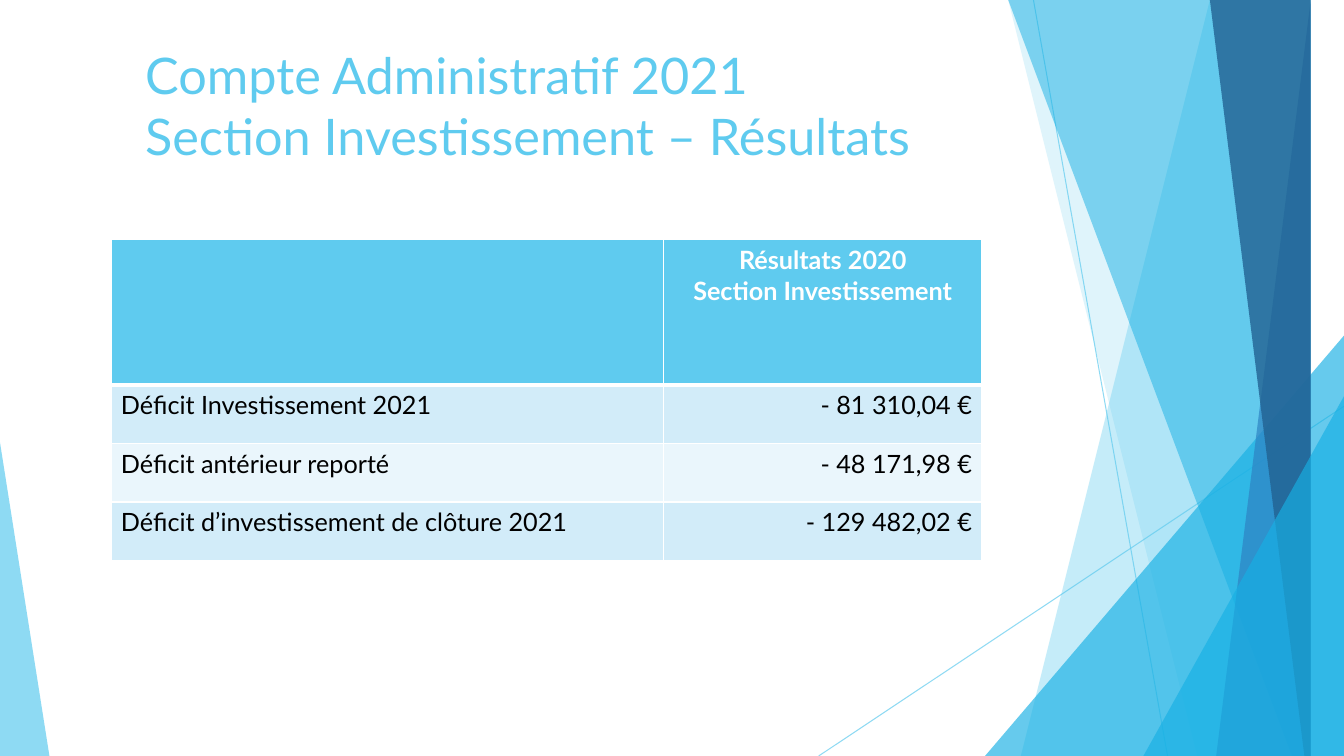
from dataclasses import dataclass

from lxml.etree import SubElement
from pptx import Presentation
from pptx.dml.color import RGBColor
from pptx.enum.shapes import MSO_CONNECTOR, MSO_SHAPE
from pptx.enum.text import MSO_ANCHOR, PP_ALIGN
from pptx.oxml.ns import qn
from pptx.util import Inches, Pt

# Content
TITLE = ("Compte Administratif 2021", "Section Investissement – Résultats")
ROWS = [
    ("", "Résultats 2020\nSection Investissement"),
    ("Déficit Investissement 2021", "- 81 310,04 €"),
    ("Déficit antérieur reporté", "- 48 171,98 €"),
    ("Déficit d’investissement de clôture 2021", "- 129 482,02 €"),
]


@dataclass(frozen=True)
class Theme:
    font: str = "Lato"
    title_size: int = 36
    table_size: int = 18
    sky: str = "5FCBEF"
    cyan: str = "17B0E4"
    blue: str = "2E83C3"
    navy: str = "226292"
    white: str = "FFFFFF"
    black: str = "000000"
    bands: tuple = ("EAF6FC", "D2ECF9")


THEME = Theme()

# Layout, in inches
WIDTH, HEIGHT = 13.33, 7.5
TITLE_BOX = (1.34, 0.39, 10.83, 1.44)
TABLE_LEFT, TABLE_TOP = 1.1, 2.38
COLUMNS = (5.48, 3.16)
HEADER_HEIGHT, ROW_HEIGHT = 1.44, 0.58

# Decoration: rays run from point to point
RAYS = [((10.25, 0), (11.58, HEIGHT)), ((WIDTH, 4.03), (8.12, HEIGHT))]
# Facets reach the right edge: (left at top, left at bottom, colour, opacity)
# Triangles stand on the bottom edge: (left, width, height, apex, colour, opacity)
DECORATION = [
    (12.28, 10.04, THEME.sky, 36),
    (10.5, 11.83, THEME.sky, 20),
    (9.77, 3.56, 4.17, 1, THEME.cyan, 66),
    (10.21, 12.91, THEME.cyan, 50),
    (13.03, 11.92, THEME.blue, 70),
    (11.96, 13.18, THEME.navy, 80),
    (11.34, 1.99, 3.57, 1, THEME.cyan, 66),
    (0, 0.49, 3.11, 0, THEME.sky, 70),
]


def paint(fill, colour, opacity=100):
    fill.solid()
    fill.fore_color.rgb = RGBColor.from_string(colour)
    if opacity < 100:
        tint = fill._xPr.find(qn("a:solidFill"))[0]
        SubElement(tint, qn("a:alpha"), val=str(opacity * 1000))


def style(para, size, colour, bold=False):
    para.font.name = THEME.font
    para.font.size = Pt(size)
    para.font.bold = bold
    para.font.color.rgb = RGBColor.from_string(colour)


def add_ray(page, start, end):
    ray = page.shapes.add_connector(
        MSO_CONNECTOR.STRAIGHT, *map(Inches, start + end))
    ray.line.width = Pt(0.75)
    paint(ray.line.fill, THEME.sky, 70)
    SubElement(ray._element.spPr, qn("a:effectLst"))


def add_facet(page, top, bottom):
    outline = page.shapes.build_freeform(top, 0, scale=Inches(1))
    outline.add_line_segments([(WIDTH, 0), (WIDTH, HEIGHT), (bottom, HEIGHT)])
    return outline.convert_to_shape()


def add_triangle(page, left, width, height, apex):
    triangle = page.shapes.add_shape(
        MSO_SHAPE.ISOSCELES_TRIANGLE,
        *map(Inches, (left, HEIGHT - height, width, height)))
    triangle.adjustments[0] = apex
    return triangle


def add_decoration(page):
    for start, end in RAYS:
        add_ray(page, start, end)
    for *geometry, colour, opacity in DECORATION:
        add = add_facet if len(geometry) == 2 else add_triangle
        shape = add(page, *geometry)
        paint(shape.fill, colour, opacity)
        shape.line.fill.background()
        shape.shadow.inherit = False


def set_border(cell, side, points):
    line = SubElement(cell._tc.get_or_add_tcPr(), qn(f"a:ln{side}"),
                      w=str(Pt(points)))
    fill = SubElement(line, qn("a:solidFill"))
    SubElement(fill, qn("a:srgbClr"), val=THEME.white)


def add_title(page):
    title = page.shapes.title
    title.left, title.top, title.width, title.height = map(Inches, TITLE_BOX)
    frame = title.text_frame
    frame.text = "\v".join(TITLE)
    frame.word_wrap = True
    frame.vertical_anchor = MSO_ANCHOR.TOP
    frame.paragraphs[0].alignment = PP_ALIGN.LEFT
    style(frame.paragraphs[0], THEME.title_size, THEME.sky)


def add_results(page):
    heights = [HEADER_HEIGHT] + [ROW_HEIGHT] * (len(ROWS) - 1)
    box = (TABLE_LEFT, TABLE_TOP, sum(COLUMNS), sum(heights))
    table = page.shapes.add_table(
        len(ROWS), len(COLUMNS), *map(Inches, box)).table
    for column, width in zip(table.columns, COLUMNS):
        column.width = Inches(width)
    for r, (texts, height) in enumerate(zip(ROWS, heights)):
        table.rows[r].height = Inches(height)
        header = r == 0
        for c, text in enumerate(texts):
            cell = table.cell(r, c)
            cell.text = text
            for side in "LRTB":
                thick = (header and side == "B") or (r == 1 and side == "T")
                set_border(cell, side, 3 if thick else 1)
            paint(cell.fill, THEME.sky if header else THEME.bands[r % 2])
            for para in cell.text_frame.paragraphs:
                style(para, THEME.table_size,
                      THEME.white if header else THEME.black, header)
                if header:
                    para.alignment = PP_ALIGN.CENTER
                else:
                    para.alignment = PP_ALIGN.RIGHT if c else PP_ALIGN.LEFT


def main():
    deck = Presentation()
    deck.slide_width, deck.slide_height = Inches(WIDTH), Inches(HEIGHT)
    page = deck.slides.add_slide(deck.slide_layouts.get_by_name("Title Only"))
    paint(page.background.fill, THEME.white)
    add_decoration(page)
    add_title(page)
    add_results(page)
    deck.save("out.pptx")


if __name__ == "__main__":
    main()
